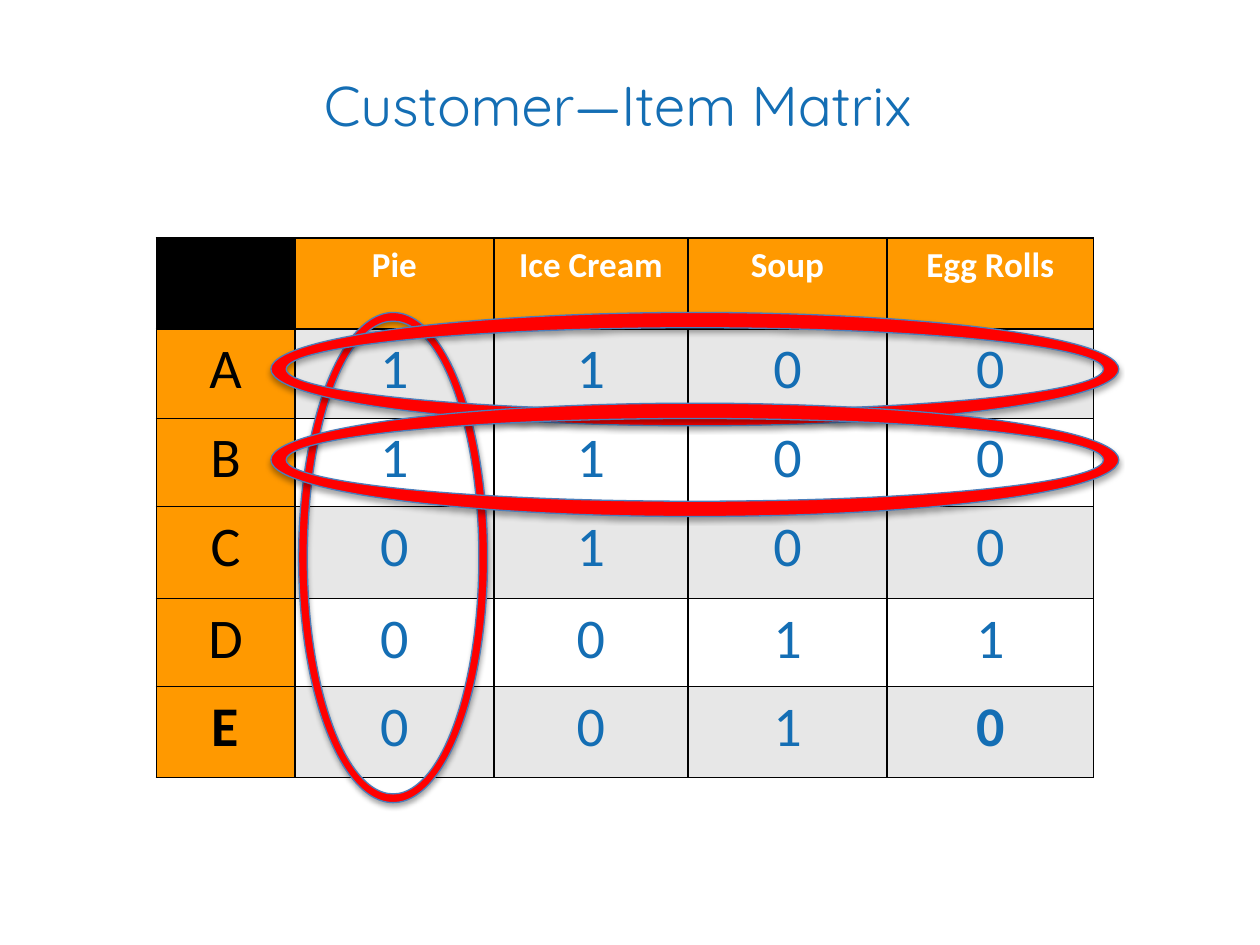
from dataclasses import dataclass

from lxml.etree import SubElement
from pptx import Presentation
from pptx.dml.color import RGBColor
from pptx.enum.shapes import MSO_SHAPE
from pptx.enum.text import MSO_ANCHOR, PP_ALIGN
from pptx.oxml.ns import qn
from pptx.util import Emu, Pt

EMU_PER_PX = 9144  # 100 px to the inch
BLACK, WHITE, GREY = "000000", "FFFFFF", "E7E7E7"
ORANGE, BLUE, RED, RING_EDGE = "FF9900", "146EB4", "FF0000", "4B7EBC"

ITEMS = ["", "Pie", "Ice Cream", "Soup", "Egg Rolls"]
PURCHASES = {"A": "1100", "B": "1100", "C": "0100", "D": "0011", "E": "0010"}
COLUMN_WIDTHS = [110, 158, 154, 158, 164]
ROW_HEIGHTS = [72, 71, 70, 73, 70, 72]


@dataclass
class Ring:
    left: int
    top: int
    width: int
    height: int
    thickness: float


RINGS = [
    Ring(237, 248, 150, 389, 0.046),
    Ring(215, 248, 673, 90, 0.135),
    Ring(215, 320, 673, 90, 0.135),
]


def px(length: int) -> Emu:
    return Emu(length * EMU_PER_PX)


def color(value: str) -> RGBColor:
    return RGBColor.from_string(value)


def style_text(frame, size: int, font_name: str, ink: str, bold: bool = False) -> None:
    paragraph = frame.paragraphs[0]
    paragraph.alignment = PP_ALIGN.CENTER
    for run in paragraph.runs:
        run.font.size = Pt(size)
        run.font.name = font_name
        run.font.bold = bold
        run.font.color.rgb = color(ink)


def add_borders(cell) -> None:
    properties = cell._tc.get_or_add_tcPr()
    for side in ("a:lnL", "a:lnR", "a:lnT", "a:lnB"):
        line = SubElement(properties, qn(side), w=str(Pt(1)))
        SubElement(SubElement(line, qn("a:solidFill")), qn("a:srgbClr"), val=BLACK)


def add_title(slide) -> None:
    title = slide.shapes.title
    title.left, title.top, title.width, title.height = px(27), px(51), px(939), px(95)
    title.text_frame.text = "Customer—Item Matrix "
    title.text_frame.vertical_anchor = MSO_ANCHOR.TOP
    style_text(title.text_frame, 32, "Quicksand", BLUE)


def cell_style(row: int, column: int) -> tuple[str, str, int, bool]:
    """Return fill, ink, text size and boldness of a matrix cell."""
    if row == 0:
        return (ORANGE if column else BLACK), WHITE, 20, True
    last_row = row == len(PURCHASES)
    if column == 0:
        return ORANGE, BLACK, 32, last_row
    fill = GREY if row % 2 else WHITE
    return fill, BLUE, 32, last_row and column == len(ITEMS) - 1


def add_matrix(slide) -> None:
    rows = [ITEMS] + [[customer, *marks] for customer, marks in PURCHASES.items()]
    matrix = slide.shapes.add_table(
        len(rows), len(ITEMS), px(124), px(189),
        px(sum(COLUMN_WIDTHS)), px(sum(ROW_HEIGHTS))).table
    for column, width in zip(matrix.columns, COLUMN_WIDTHS):
        column.width = px(width)
    for row, height in zip(matrix.rows, ROW_HEIGHTS):
        row.height = px(height)
    for r, words in enumerate(rows):
        for c, word in enumerate(words):
            cell = matrix.cell(r, c)
            fill, ink, size, bold = cell_style(r, c)
            add_borders(cell)
            cell.fill.solid()
            cell.fill.fore_color.rgb = color(fill)
            cell.text_frame.text = word
            style_text(cell.text_frame, size, "Calibri", ink, bold)


def add_soft_shadow(shape) -> None:
    shape.shadow.inherit = False
    effects = shape._element.spPr.find(qn("a:effectLst"))
    shadow = SubElement(effects, qn("a:outerShdw"), blurRad=str(Pt(3.1)),
                        dist=str(Pt(1.8)), dir="5400000", rotWithShape="0")
    shade = SubElement(shadow, qn("a:srgbClr"), val=BLACK)
    SubElement(shade, qn("a:alpha"), val="35000")


def add_ring(slide, ring: Ring) -> None:
    donut = slide.shapes.add_shape(
        MSO_SHAPE.DONUT, px(ring.left), px(ring.top), px(ring.width), px(ring.height))
    donut.adjustments[0] = ring.thickness
    donut.fill.solid()
    donut.fill.fore_color.rgb = color(RED)
    donut.line.color.rgb = color(RING_EDGE)
    donut.line.width = Pt(0.75)
    add_soft_shadow(donut)


def main() -> None:
    presentation = Presentation()
    presentation.slide_width, presentation.slide_height = px(1000), px(750)
    slide = presentation.slides.add_slide(presentation.slide_layouts[5])
    add_title(slide)
    add_matrix(slide)
    for ring in RINGS:
        add_ring(slide, ring)
    presentation.save("out.pptx")


if __name__ == "__main__":
    main()
